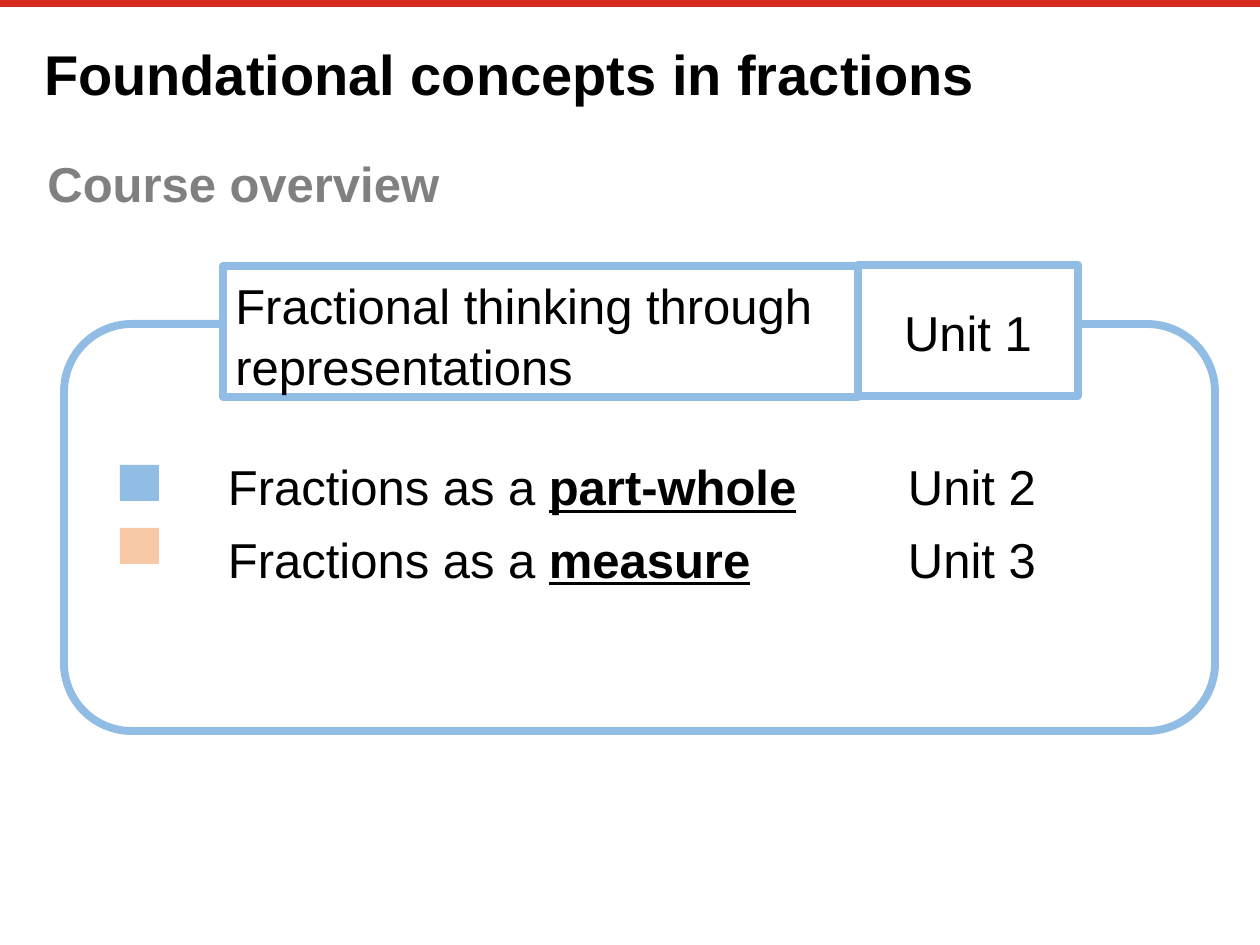
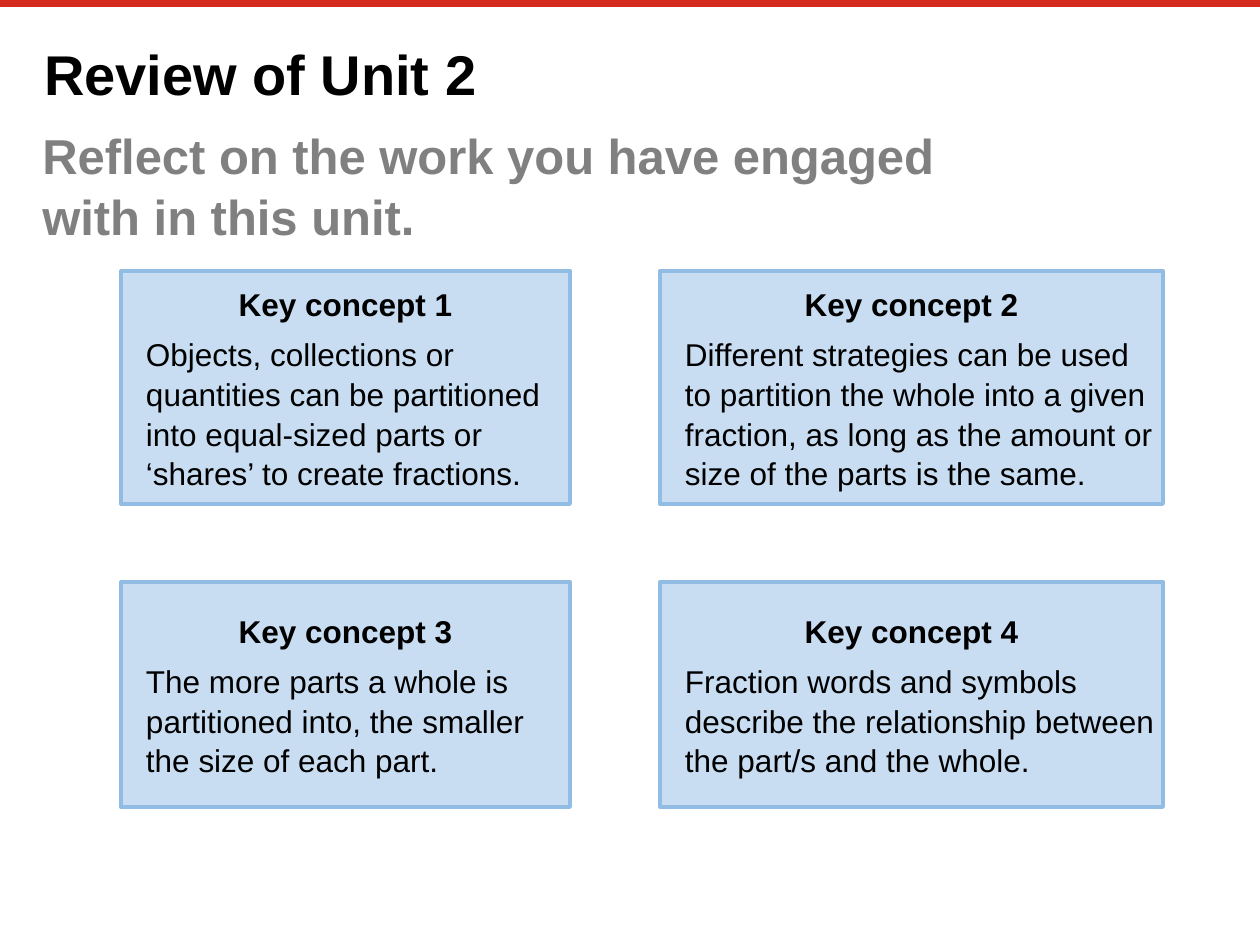
from lxml import etree
from pptx import Presentation
from pptx import util as u
from pptx.dml.color import RGBColor
from pptx.enum import shapes, text
from pptx.oxml import ns

SCALE = 914400 / 126
COLORS = {"red": "D52B1E", "black": "000000", "grey": "808080", "white": "FFFFFF",
          "blue": "91BCE4", "pale_blue": "C8DDF2", "peach": "F7C9A6"}
TITLES = ["Foundational concepts in fractions", "Review of Unit 2"]
SUBTITLES = [("Course overview", (35, 144, 436, 72)),
             ("Reflect on the work you have engaged\vwith in this unit.", (30, 116, 1186, 131))]


def add_box(slide, kind, bounds, fill=None, line=None, width=0):
    lengths = [round(value * SCALE) for value in bounds]
    if kind is None:
        shape = slide.shapes.add_textbox(*lengths)
    else:
        shape = slide.shapes.add_shape(kind, *lengths)
        shape.shadow.inherit = False
        if fill:
            shape.fill.solid()
            shape.fill.fore_color.rgb = RGBColor.from_string(COLORS[fill])
        else:
            shape.fill.background()
        if line:
            shape.line.color.rgb = RGBColor.from_string(COLORS[line])
            shape.line.width = u.Pt(width)
        else:
            shape.line.fill.background()
    return shape


def write(shape, lines, size, color="black", bold=False, align=text.PP_ALIGN.LEFT,
          anchor=text.MSO_ANCHOR.TOP, inset=True):
    frame = shape.text_frame
    frame.word_wrap = True
    frame.auto_size = text.MSO_AUTO_SIZE.NONE
    frame.vertical_anchor = anchor
    if not inset:
        frame.margin_left = frame.margin_right = frame.margin_top = frame.margin_bottom = 0
    frame.text = "\n".join(lines)
    for index, paragraph in enumerate(frame.paragraphs):
        paragraph.alignment = align
        paragraph.line_spacing = 1.05
        paragraph.space_before = u.Pt(6 if index else 0)
        paragraph.font.name = "Arial"
        paragraph.font.size = u.Pt(size)
        paragraph.font.bold = bold
        paragraph.font.color.rgb = RGBColor.from_string(COLORS[color])
    return frame.paragraphs


presentation = Presentation()
presentation.slide_width = round(1260 * SCALE)
presentation.slide_height = round(945 * SCALE)

slides = []
for title, (subtitle, bounds) in zip(TITLES, SUBTITLES):
    slide = presentation.slides.add_slide(presentation.slide_layouts[5])
    band = slide.shapes.add_connector(shapes.MSO_CONNECTOR.STRAIGHT, 0, round(3 * SCALE),
                                      presentation.slide_width, round(3 * SCALE))
    band.line.color.rgb = RGBColor.from_string(COLORS["red"])
    band.line.width = u.Pt(4.2)
    etree.SubElement(band._element.spPr, ns.qn("a:effectLst"))
    heading = slide.shapes.title
    heading.left, heading.top, heading.width, heading.height = [
        round(value * SCALE) for value in (44, 36, 1171, 60)]
    write(heading, [title], 32, bold=True, inset=False)
    write(add_box(slide, None, bounds), [subtitle], 28, "grey", bold=True)
    slides.append(slide)
overview, review = slides

RECTANGLE = shapes.MSO_SHAPE.RECTANGLE
add_box(overview, shapes.MSO_SHAPE.ROUNDED_RECTANGLE, (64, 324, 1151, 407), line="blue", width=4.5)
topic = add_box(overview, RECTANGLE, (223, 266, 635, 131), "white", "blue", 4.5)
write(topic, ["Fractional thinking through representations"], 28)
unit = add_box(overview, RECTANGLE, (858, 265, 220, 131), "white", "blue", 4.5)
write(unit, ["Unit 1"], 28, align=text.PP_ALIGN.CENTER, anchor=text.MSO_ANCHOR.MIDDLE)
for row, color in enumerate(["blue", "peach"]):
    add_box(overview, RECTANGLE, (120, 465 + 63 * row, 39, 36), color)

meanings = [("part-whole", "Unit 2"), ("measure", "Unit 3")]
unit_list = add_box(overview, None, (228, 454, 929, 157))
paragraphs = write(unit_list, ["Fractions as a "] * len(meanings), 28, inset=False)
for paragraph, (meaning, unit_name) in zip(paragraphs, meanings):
    tabs = etree.Element(ns.qn("a:tabLst"))
    etree.SubElement(tabs, ns.qn("a:tab"), pos=str(round(680 * SCALE)), algn="l")
    properties = paragraph._p.get_or_add_pPr()
    properties.insert(properties.index(properties.find(ns.qn("a:defRPr"))), tabs)
    run = paragraph.add_run()
    run.text = meaning
    run.font.bold = run.font.underline = True
    paragraph.add_run().text = "\t" + unit_name

concepts = [
    "Objects, collections or quantities can be partitioned into equal-sized parts or ‘shares’ to create fractions.",
    "Different strategies can be used to partition the whole into a given fraction, "
    "as long as the amount or size of the parts is the same.",
    "The more parts a whole is partitioned into, the smaller the size of each part.",
    "Fraction words and symbols describe the relationship between the part/s and the whole.",
]
columns = [(121, 449), (660, 503)]
rows = [(271, 233), (582, 225)]
for index, concept in enumerate(concepts):
    left, width = columns[index % 2]
    top, height = rows[index // 2]
    card = add_box(review, RECTANGLE, (left, top, width, height), "pale_blue", "blue", 2.25)
    name, body = write(card, [f"Key concept {index + 1}", concept], 18,
                       anchor=text.MSO_ANCHOR.MIDDLE, inset=False)
    name.alignment = text.PP_ALIGN.CENTER
    name.font.bold = True
    body._p.get_or_add_pPr().set("marL", str(round(25 * SCALE)))

presentation.save("out.pptx")
